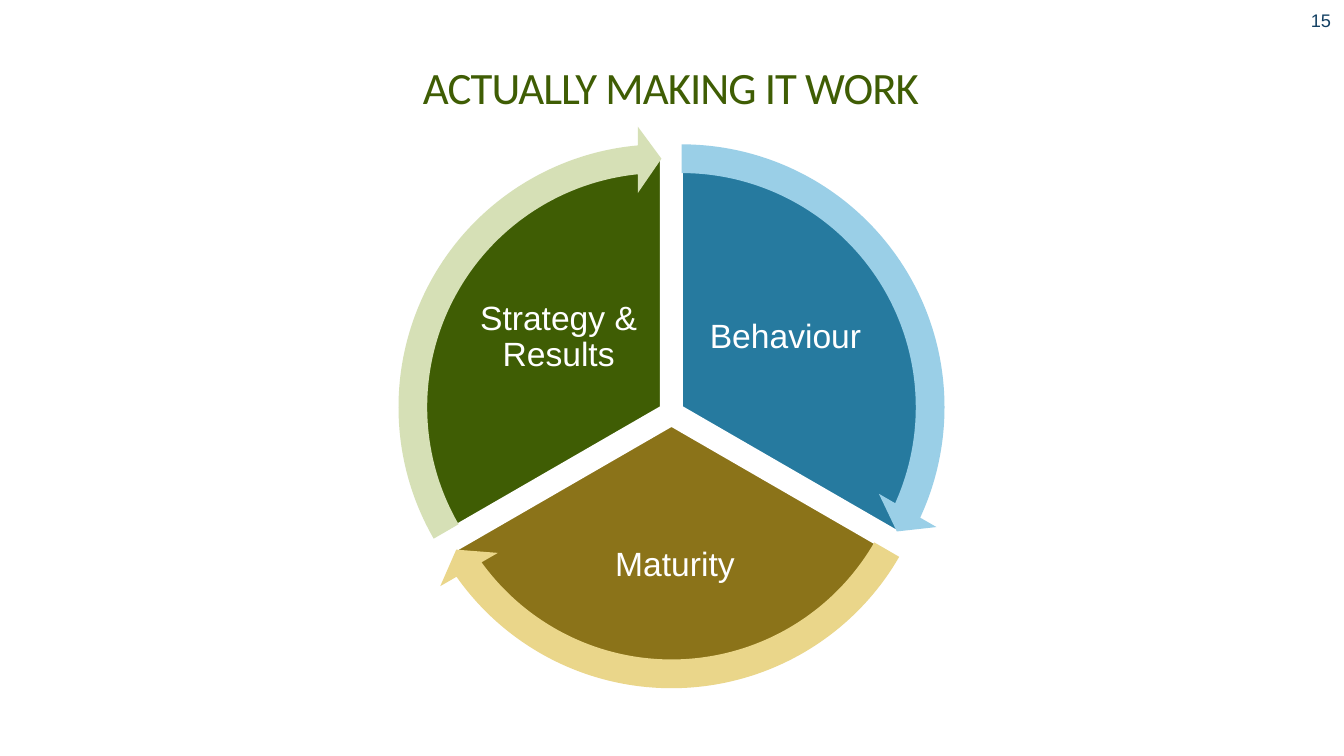
from pptx import Presentation
from pptx.dml.color import RGBColor
from pptx.enum.shapes import MSO_SHAPE
from pptx.enum.text import MSO_ANCHOR, PP_ALIGN
from pptx.util import Inches, Pt

PIE = MSO_SHAPE.PIE
ARROW = MSO_SHAPE.CIRCULAR_ARROW
TOP, MIDDLE = MSO_ANCHOR.TOP, MSO_ANCHOR.MIDDLE
CENTER, RIGHT = PP_ALIGN.CENTER, PP_ALIGN.RIGHT

COLORS = {
    "white": "FFFFFF", "navy": "134063",
    "blue": "267A9F", "light blue": "9ACFE7",
    "gold": "8B7319", "light gold": "EAD68A",
    "green": "3F5D04", "light green": "D6E0B6",
}
TITLE = "ACTUALLY MAKING IT WORK"
PAGE_NUMBER = "15"
PIE_SIZE, ARROW_SIZE = 4.98, 5.59
SECTORS = [
    {"label": "Behaviour", "color": "blue", "center": (6.76, 4.04),
     "angles": (162, 18), "arrow": (14.725, 161.994), "box": (6.9, 2.61, 1.78, 1.48)},
    {"label": "Maturity", "color": "gold", "center": (6.66, 4.22),
     "angles": (18, 90), "arrow": (86.72, 18.005), "box": (5.36, 4.96, 2.67, 1.3)},
    {"label": "Strategy & Results", "color": "green", "center": (6.56, 4.04),
     "angles": (90, 162), "arrow": (158.73, 90), "box": (4.65, 2.61, 1.78, 1.48)},
]


def rgb(name):
    return RGBColor.from_string(COLORS[name])


def add_text(page, text, place, size, font, color, align=CENTER, anchor=MIDDLE,
             insets=(0, 0), line_spacing=None, tracking=None):
    box = page.shapes.add_textbox(*map(Inches, place))
    frame = box.text_frame
    frame.word_wrap = True
    frame.vertical_anchor = anchor
    frame.margin_left = frame.margin_right = Inches(insets[0])
    frame.margin_top = frame.margin_bottom = Inches(insets[1])
    para = frame.paragraphs[0]
    para.alignment = align
    para.line_spacing = line_spacing
    span = para.add_run()
    span.text = text
    span.font.size = Pt(size)
    span.font.name = font
    span.font.color.rgb = rgb(color)
    if tracking is not None:
        span.font._element.set("spc", str(round(tracking * 100)))


def add_round(page, kind, center, size, color, adjustments):
    corner = [Inches(value - size / 2) for value in center]
    shape = page.shapes.add_shape(kind, *corner, Inches(size), Inches(size))
    for index, value in enumerate(adjustments):
        shape.adjustments[index] = value
    shape.shadow.inherit = False
    shape.fill.solid()
    shape.fill.fore_color.rgb = rgb(color)
    shape.line.fill.background()
    return shape


def main():
    deck = Presentation()
    deck.slide_width, deck.slide_height = Inches(13.33), Inches(7.5)
    page = deck.slides.add_slide(deck.slide_layouts[6])

    add_text(page, PAGE_NUMBER, (10.44, 0, 2.89, 0.4), 13, "Arial", "navy",
             align=RIGHT, insets=(0.13, 0.07))
    add_text(page, TITLE, (1.67, 0.59, 9.97, 1.68), 32, "Calibri", "green",
             anchor=TOP, tracking=-0.7)

    for sector in SECTORS:
        wedge = add_round(page, PIE, sector["center"], PIE_SIZE,
                          sector["color"], sector["angles"])
        wedge.line.color.rgb = rgb("white")
        wedge.line.width = Pt(2)
        add_text(page, sector["label"], sector["box"], 24, "Arial", "white",
                 insets=(0.03, 0.03), line_spacing=0.9)

    for sector in SECTORS:
        add_round(page, ARROW, sector["center"], ARROW_SIZE,
                  "light " + sector["color"], (0.051, 3.275, *sector["arrow"], 0.059))

    deck.save("out.pptx")


if __name__ == "__main__":
    main()
